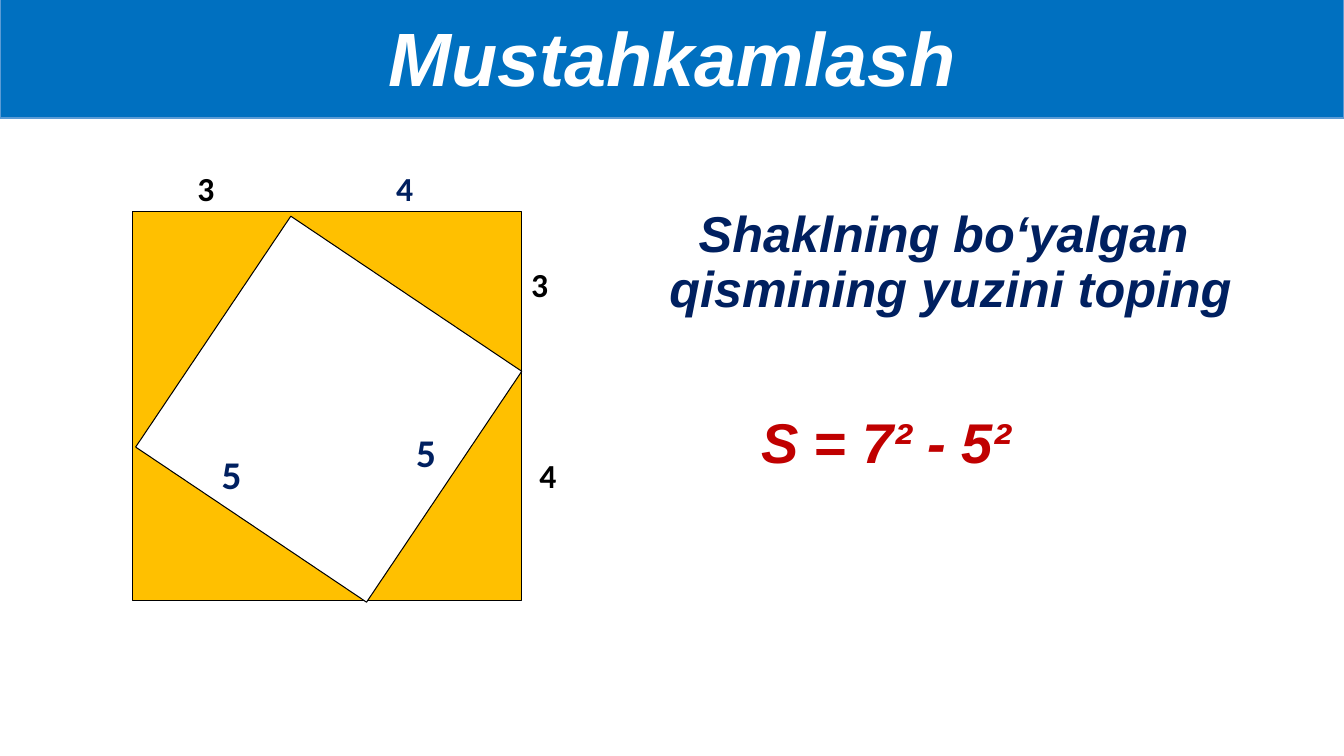
from dataclasses import dataclass

from pptx import Presentation
from pptx.dml.color import RGBColor
from pptx.enum.shapes import MSO_SHAPE
from pptx.enum.text import MSO_ANCHOR, PP_ALIGN
from pptx.util import Inches, Pt


@dataclass(frozen=True)
class Theme:
    """Colours, fonts and type sizes of the slide."""
    black: str = "000000"
    white: str = "FFFFFF"
    navy: str = "002060"
    red: str = "C00000"
    amber: str = "FFC000"
    blue: str = "0070C0"
    edge: str = "5B9BD5"
    heading_font: str = "Arial"
    label_font: str = "Calibri"
    banner: int = 54
    formula: int = 40
    task: int = 36
    inner_label: int = 28
    outer_label: int = 24


class SlideBuilder:
    """Draws styled elements on the current slide."""

    def __init__(self, prs, theme):
        """Add a blank slide and keep the theme."""
        self.theme = theme
        self.s = prs.slides.add_slide(prs.slide_layouts[6])

    def rect(self, left, top, width, height, fill, line, weight=0.75, rotation=0):
        """Add a filled and outlined rectangle."""
        sp = self.s.shapes.add_shape(
            MSO_SHAPE.RECTANGLE, Inches(left), Inches(top), Inches(width), Inches(height))
        sp.shadow.inherit = False
        sp.fill.solid()
        sp.fill.fore_color.rgb = RGBColor.from_string(fill)
        sp.line.color.rgb = RGBColor.from_string(line)
        sp.line.width = Pt(weight)
        sp.rotation = rotation
        return sp

    def set_text(self, sp, text, size, color, font, italic=False, align=PP_ALIGN.LEFT,
                 anchor=MSO_ANCHOR.TOP, spacing=None, wrap=True):
        """Put bold text into a shape."""
        tf = sp.text_frame
        tf.word_wrap = wrap
        tf.vertical_anchor = anchor
        p = tf.paragraphs[0]
        p.text = text
        p.alignment = align
        p.line_spacing = spacing
        for r in p.runs:
            r.font.name = font
            r.font.size = Pt(size)
            r.font.bold = True
            r.font.italic = italic
            r.font.color.rgb = RGBColor.from_string(color)

    def text(self, left, top, width, height, *content, **style):
        """Add a text box."""
        sp = self.s.shapes.add_textbox(
            Inches(left), Inches(top), Inches(width), Inches(height))
        self.set_text(sp, *content, **style)

    def heading(self, left, top, width, height, text, size, color, **style):
        """Add a bold italic text box in the heading font."""
        self.text(left, top, width, height, text, size, color,
                  self.theme.heading_font, italic=True, **style)

    def label(self, left, top, width, text, size, color):
        """Add a side length."""
        self.text(left, top, width, 0.5, text, size, color, self.theme.label_font)

    def banner(self, text):
        """Add the title band across the top."""
        t = self.theme
        sp = self.rect(0, -0.06, 13.33, 1.23, t.blue, t.edge, weight=1)
        self.set_text(sp, text, t.banner, t.white, t.heading_font, italic=True,
                      align=PP_ALIGN.CENTER, anchor=MSO_ANCHOR.MIDDLE)


def main():
    """Build and save the slide."""
    prs = Presentation()
    prs.slide_width, prs.slide_height = Inches(13.33), Inches(7.5)
    t = Theme()
    b = SlideBuilder(prs, t)

    b.rect(1.31, 2.1, 3.86, 3.86, t.amber, t.black)
    b.heading(6.19, 1.89, 6.48, 1.45, "Shaklning bo‘yalgan \vqismining yuzini toping",
              t.task, t.navy, align=PP_ALIGN.CENTER, anchor=MSO_ANCHOR.MIDDLE, spacing=0.9)
    b.rect(1.88, 2.68, 2.76, 2.76, t.white, t.black, rotation=33.9)

    side_lengths = [
        (1.86, 1.62, 0.63, "3", t.outer_label, t.black),
        (3.83, 1.62, 0.79, "4", t.outer_label, t.navy),
        (2.1, 4.42, 0.79, "5", t.inner_label, t.navy),
        (4.03, 4.2, 0.39, "5", t.inner_label, t.navy),
        (5.17, 2.57, 0.39, "3", t.outer_label, t.black),
        (5.25, 4.46, 0.55, "4", t.outer_label, t.black),
    ]
    for side in side_lengths:
        b.label(*side)

    b.heading(7.45, 3.99, 2.71, 0.77, "S = 7² - 5²", t.formula, t.red, wrap=False)
    b.banner("Mustahkamlash")
    prs.save("out.pptx")


if __name__ == "__main__":
    main()
